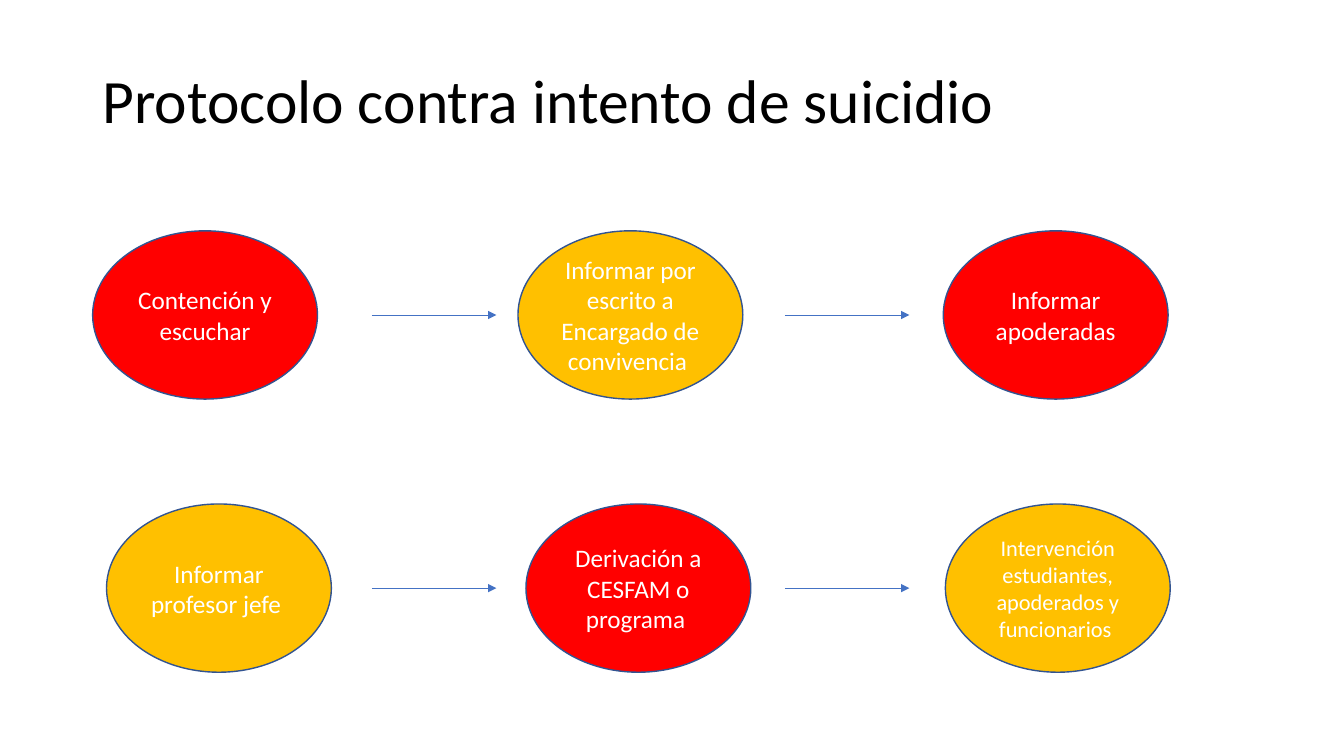
from collections import namedtuple
from dataclasses import dataclass

from lxml import etree
from pptx import Presentation
from pptx import util as u
from pptx.dml import color
from pptx.enum import shapes, text
from pptx.oxml import ns

Pt = u.Pt
Box = namedtuple("Box", "x y w h")
Step = namedtuple("Step", "label fill size")


@dataclass(frozen=True)
class Theme:
    font: str = "Calibri"
    black: str = "000000"
    white: str = "FFFFFF"
    red: str = "FF0000"
    gold: str = "FFC000"
    edge: str = "325491"
    blue: str = "4472C4"
    title: int = 44
    body: int = 18
    small: int = 16


T = Theme()
OVAL = 160.6
ARROW = Box(265.7, 0, 88.9, 0)
PITCH = 295.0


def rgb(code):
    return color.RGBColor.from_string(code)


def write(frame, words, size, tint, align):
    frame.word_wrap = True
    frame.vertical_anchor = text.MSO_ANCHOR.MIDDLE
    para = frame.paragraphs[0]
    para.alignment = align
    run = para.add_run()
    run.text = words
    run.font.name = T.font
    run.font.size = Pt(size)
    run.font.color.rgb = rgb(tint)
    return para


def title(slide, box, words):
    area = slide.shapes.add_textbox(*map(Pt, box))
    para = write(area.text_frame, words, T.title, T.black, text.PP_ALIGN.LEFT)
    para.line_spacing = 0.9


def oval(slide, box, step):
    item = slide.shapes.add_shape(shapes.MSO_SHAPE.OVAL, *map(Pt, box))
    item.shadow.inherit = False
    item.fill.solid()
    item.fill.fore_color.rgb = rgb(step.fill)
    item.line.color.rgb = rgb(T.edge)
    item.line.width = Pt(1)
    write(item.text_frame, step.label, step.size, T.white, text.PP_ALIGN.CENTER)


def arrow(slide, box):
    x, y, w, h = box
    ends = map(Pt, (x, y, x + w, y + h))
    link = slide.shapes.add_connector(shapes.MSO_CONNECTOR.STRAIGHT, *ends)
    link.line.color.rgb = rgb(T.blue)
    link.line.width = Pt(0.5)
    props = link._element.spPr
    head = etree.SubElement(props.find(ns.qn("a:ln")), ns.qn("a:tailEnd"))
    head.set("type", "triangle")
    etree.SubElement(props, ns.qn("a:effectLst"))


def flow(slide, box, steps):
    gap = (box.w - OVAL) / (len(steps) - 1)
    for i, step in enumerate(steps):
        oval(slide, Box(box.x + i * gap, box.y, OVAL, box.h), step)
    for i in range(len(steps) - 1):
        x = ARROW.x + i * PITCH
        arrow(slide, Box(x, box.y + box.h / 2, ARROW.w, ARROW.h))


def main():
    deck = Presentation()
    deck.slide_width, deck.slide_height = Pt(960), Pt(540)
    slide = deck.slides.add_slide(deck.slide_layouts[6])
    title(slide, Box(66, 21.6, 828, 104.4), "Protocolo contra intento de suicidio")
    flow(slide, Box(66.2, 164.9, 768.2, 120.2), [
        Step("Contención y escuchar", T.red, T.body),
        Step("Informar por escrito a Encargado de convivencia ", T.gold, T.body),
        Step("Informar apoderadas", T.red, T.body),
    ])
    flow(slide, Box(76.1, 360, 759.8, 120.2), [
        Step("Informar profesor jefe ", T.gold, T.body),
        Step("Derivación a CESFAM o programa ", T.red, T.body),
        Step("Intervención estudiantes, apoderados y funcionarios ", T.gold, T.small),
    ])
    deck.save("out.pptx")


if __name__ == "__main__":
    main()
